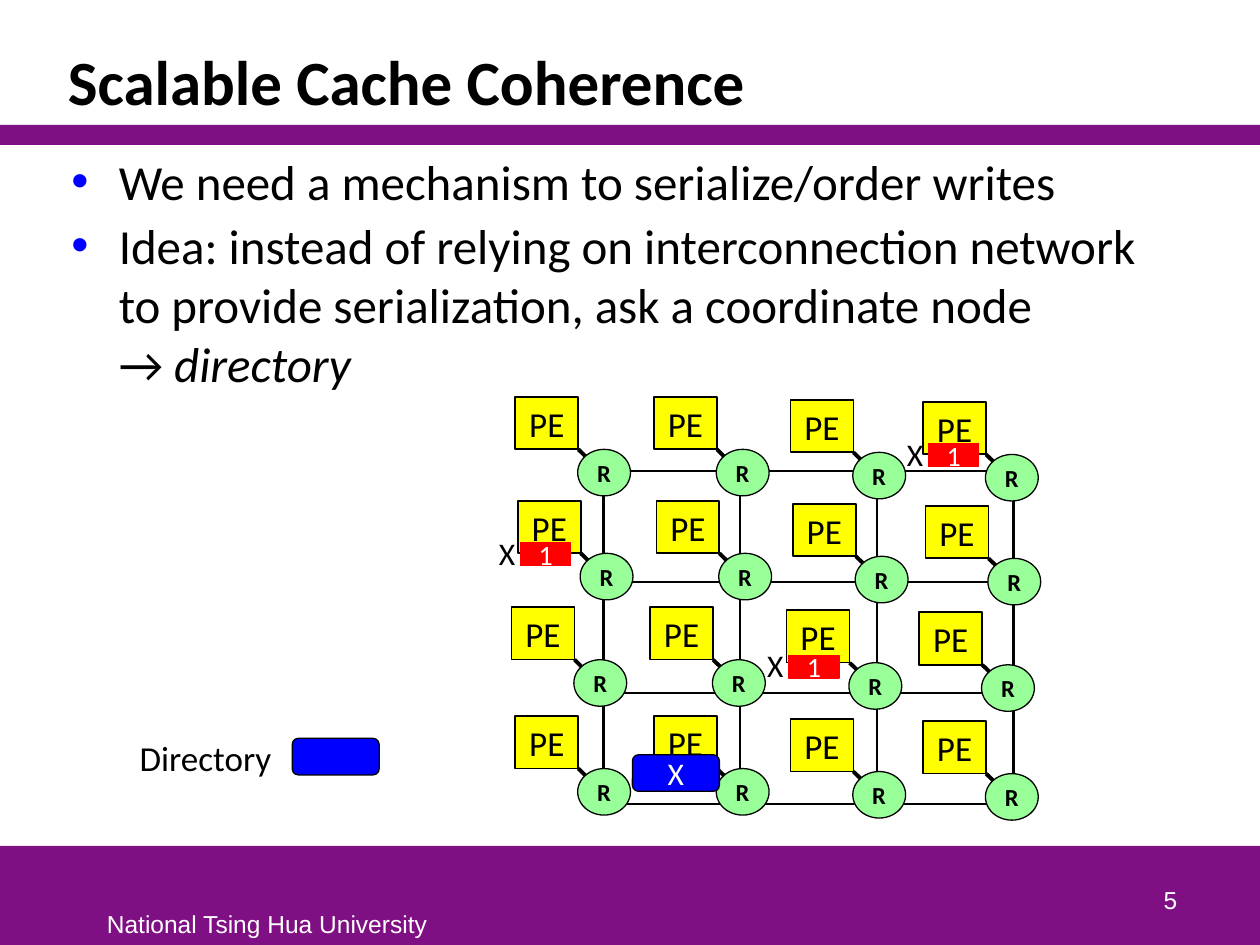
from lxml.etree import SubElement
from pptx import Presentation
from pptx.dml.color import RGBColor
from pptx.enum.shapes import MSO_CONNECTOR, MSO_SHAPE
from pptx.enum.text import MSO_ANCHOR, PP_ALIGN
from pptx.oxml import parse_xml
from pptx.oxml.ns import nsdecls, qn
from pptx.util import Pt

PURPLE = RGBColor(0x7F, 0x10, 0x84)
BLACK = RGBColor(0x00, 0x00, 0x00)
WHITE = RGBColor(0xFF, 0xFF, 0xFF)
YELLOW = RGBColor(0xFF, 0xFF, 0x00)
GREEN = RGBColor(0x99, 0xFF, 0x99)
RED = RGBColor(0xFF, 0x00, 0x00)
BLUE = RGBColor(0x00, 0x00, 0xFF)


def add_block(shapes, kind, place, fill, line=None, weight=0.75, margin=None):
    """Add a filled preset shape; place is left, top, width, height in points."""
    block = shapes.add_shape(kind, *map(Pt, place))
    block.shadow.inherit = False
    block.fill.solid()
    block.fill.fore_color.rgb = fill
    if line is None:
        block.line.fill.background()
    else:
        block.line.color.rgb = line
        block.line.width = Pt(weight)
    frame = block.text_frame
    frame.vertical_anchor = MSO_ANCHOR.MIDDLE
    if margin is not None:
        frame.margin_left = frame.margin_right = Pt(margin)
        frame.margin_top = frame.margin_bottom = Pt(margin)
    return block


def write(box, text, size, color=BLACK, font="Calibri", bold=False,
          align=PP_ALIGN.LEFT, wrap=True):
    """Fill a box with text, one paragraph a line, and format every run."""
    frame = box.text_frame
    frame.word_wrap = wrap
    frame.text = text
    for paragraph in frame.paragraphs:
        paragraph.alignment = align
        for span in paragraph.runs:
            span.font.name = font
            span.font.size = Pt(size)
            span.font.bold = bold
            span.font.color.rgb = color
    return frame


deck = Presentation()
deck.slide_width, deck.slide_height = Pt(720), Pt(540)
page = deck.slides.add_slide(deck.slide_layouts[6])
shapes = page.shapes

# Bands, footer and headings
add_block(shapes, MSO_SHAPE.RECTANGLE, (0, 483.4, 720, 56.6), PURPLE)
add_block(shapes, MSO_SHAPE.RECTANGLE, (0, 71.4, 720, 11.5), PURPLE)

footer = shapes.add_textbox(Pt(54), Pt(516.2), Pt(198.7), Pt(23.8))
write(footer, "National Tsing Hua University", 14, WHITE, "Arial", wrap=False)

title = shapes.add_textbox(Pt(31.7), Pt(18), Pt(645.8), Pt(53.3))
title_frame = write(title, "Scalable Cache Coherence", 36, bold=True)
title_frame.vertical_anchor = MSO_ANCHOR.BOTTOM
title_frame.paragraphs[0].line_spacing = 0.85

body = shapes.add_textbox(Pt(33.8), Pt(83), Pt(643.7), Pt(396.5))
body_frame = write(
    body,
    "We need a mechanism to serialize/order writes\n"
    "Idea: instead of relying on interconnection network to provide "
    "serialization, ask a coordinate node \v→ ",
    28,
)
for paragraph in body_frame.paragraphs:
    properties = paragraph._p.get_or_add_pPr()
    properties.set("marL", str(Pt(27)))
    properties.set("indent", str(-Pt(27)))
    bullet_color = SubElement(properties, qn("a:buClr"))
    SubElement(bullet_color, qn("a:srgbClr")).set("val", str(BLUE))
    SubElement(properties, qn("a:buFont")).set("typeface", "Arial")
    SubElement(properties, qn("a:buChar")).set("char", "•")
idea = body_frame.paragraphs[1]
idea.space_before = Pt(3)
span = idea.add_run()
span.text = "directory"
span.font.name = "Calibri"
span.font.size = Pt(28)
span.font.italic = True
span.font.color.rgb = BLACK

number = shapes.add_textbox(Pt(529.9), Pt(490.3), Pt(149.8), Pt(36))
number_frame = write(number, "5", 14, WHITE, "Arial", align=PP_ALIGN.RIGHT)
number_frame.vertical_anchor = MSO_ANCHOR.BOTTOM

# Network links: a 3 by 3 grid
table = shapes.add_table(3, 3, Pt(344.9), Pt(269.3), Pt(234.2), Pt(190.2)).table
table.first_row = False
table.horz_banding = False
for column in table.columns:
    column.width = Pt(78.07)
for row in table.rows:
    row.height = Pt(63.4)
for cell in table.iter_cells():
    cell_properties = cell._tc.get_or_add_tcPr()
    for side in ("lnL", "lnR", "lnT", "lnB"):
        cell_properties.append(parse_xml(
            f'<a:{side} {nsdecls("a")} w="{Pt(1.5)}"><a:solidFill>'
            f'<a:srgbClr val="{BLACK}"/></a:solidFill></a:{side}>'))
    cell.fill.background()

# Nodes: a processing element tied to its router
ROW_STARTS = [(294.5, 226.8), (295.9, 286.2), (292.3, 347), (294.5, 409.2)]
COLUMN_OFFSETS = [(0, 0), (79.2, 0), (157.2, 1.7), (233, 2.9)]
for row_left, row_top in ROW_STARTS:
    for offset, drop in COLUMN_OFFSETS:
        left, top = row_left + offset, row_top + drop
        node = shapes.add_group_shape().shapes
        router = add_block(node, MSO_SHAPE.OVAL,
                           (left + 35.6, top + 30, 30.2, 26.6), GREEN, BLACK)
        write(router, "R", 14, bold=True, align=PP_ALIGN.CENTER, wrap=False)
        element = add_block(node, MSO_SHAPE.RECTANGLE,
                            (left, top, 36, 30), YELLOW, BLACK, 1)
        write(element, "PE", 20, align=PP_ALIGN.CENTER)
        link = node.add_connector(MSO_CONNECTOR.STRAIGHT, Pt(left + 36),
                                  Pt(top + 30), Pt(left + 40.1), Pt(top + 34))
        link.line.color.rgb = BLACK
        link.line.width = Pt(2.25)
        SubElement(link._element.spPr, qn("a:effectLst"))

# Cached copies of X
for left, top in [(297.4, 310.3), (530.6, 253.4), (450.7, 374.4)]:
    cached = shapes.add_group_shape().shapes
    value = add_block(cached, MSO_SHAPE.RECTANGLE, (left, top, 28.8, 13),
                      RED, RED, margin=0)
    write(value, "1", 16, WHITE, align=PP_ALIGN.CENTER)
    name = cached.add_textbox(Pt(left - 19.4), Pt(top - 8.6), Pt(23.8), Pt(28.8))
    write(name, "X", 18, wrap=False)

# Directory entry and its legend
entry = add_block(shapes, MSO_SHAPE.ROUNDED_RECTANGLE, (361.4, 431.3, 49.7, 20.9),
                  BLUE, BLACK, margin=0)
write(entry, "X", 18, WHITE, align=PP_ALIGN.CENTER)
add_block(shapes, MSO_SHAPE.ROUNDED_RECTANGLE, (167, 421.9, 49.7, 20.9), BLUE, BLACK)
legend = shapes.add_textbox(Pt(72.7), Pt(417.6), Pt(90.7), Pt(31.7))
write(legend, "Directory", 20, wrap=False)

deck.save("out.pptx")
